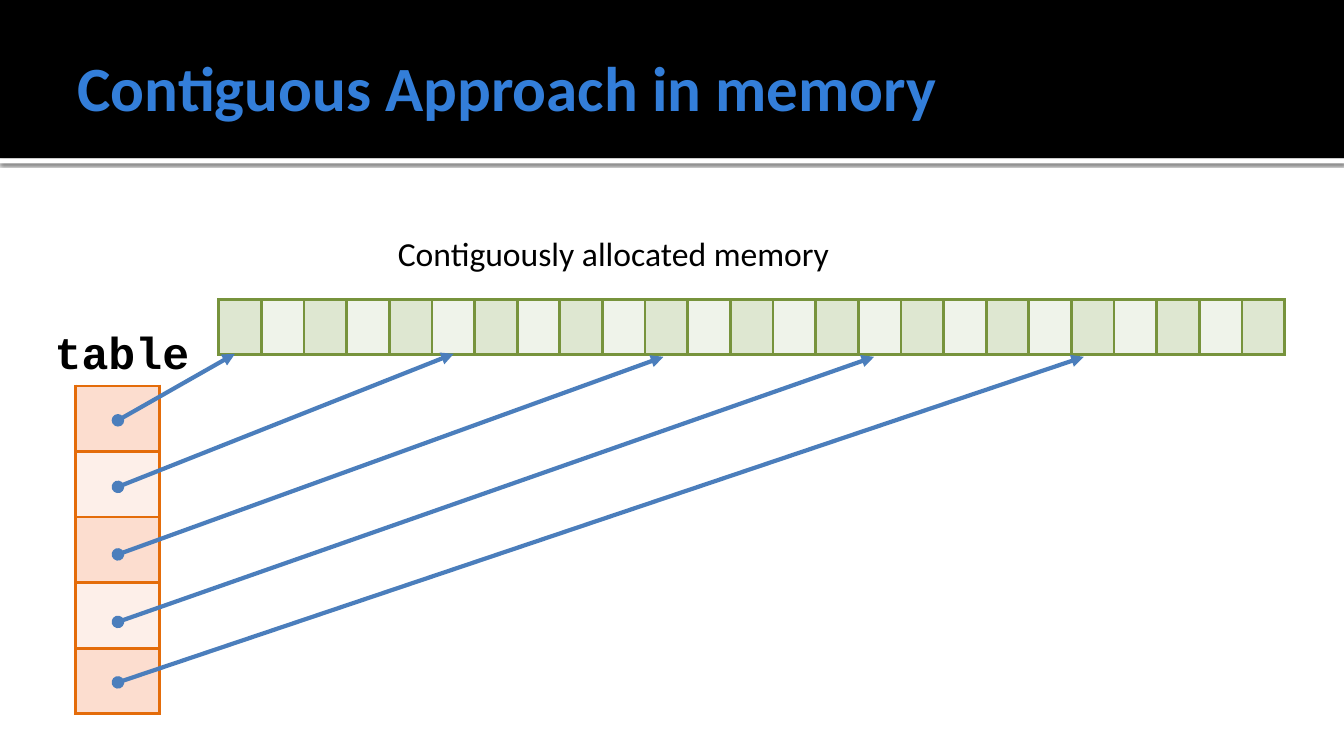
from pptx import Presentation
from pptx.dml.color import RGBColor
from pptx.enum.shapes import MSO_CONNECTOR, MSO_SHAPE
from pptx.enum.text import MSO_ANCHOR, PP_ALIGN
from pptx.oxml import parse_xml
from pptx.oxml.ns import nsdecls, qn
from pptx.util import Inches, Pt


def color(value):
    return RGBColor.from_string(value)


def element(tag, content="", **attributes):
    listed = " ".join(f'{name}="{value}"' for name, value in attributes.items())
    return parse_xml(f'<a:{tag} {nsdecls("a")} {listed}>{content}</a:{tag}>')


def write(frame, text, size, font="Calibri", fill="000000", bold=False,
          align=PP_ALIGN.LEFT, anchor=MSO_ANCHOR.TOP):
    frame.word_wrap = True
    frame.vertical_anchor = anchor
    para = frame.paragraphs[0]
    para.alignment = align
    span = para.add_run()
    span.text = text
    span.font.size = Pt(size)
    span.font.name = font
    span.font.bold = bold
    span.font.color.rgb = color(fill)


class MemorySlide:
    title_color = "337ED9"
    arrow_color = "4B7EBC"
    arrow_width = 3
    border_width = 2.25

    def __init__(self, deck):
        self.page = deck.slides.add_slide(deck.slide_layouts[5])
        self.shapes = self.page.shapes

    def bar(self, top, height, fill, shadow=False):
        box = self.shapes.add_shape(MSO_SHAPE.RECTANGLE, 0, Inches(top),
                                    Inches(13.33), Inches(height))
        box.fill.solid()
        box.fill.fore_color.rgb = color(fill)
        box.line.fill.background()
        box.shadow.inherit = False
        if shadow:
            effects = box.element.spPr.find(qn("a:effectLst"))
            effects.append(element(
                "outerShdw",
                '<a:srgbClr val="000000"><a:alpha val="60000"/></a:srgbClr>',
                blurRad=Pt(2.5), dist=Pt(0.8), dir=5400000, algn="t", rotWithShape=0))

    def title(self, text, left, top, width, height):
        box = self.shapes.title
        box.element.getparent().append(box.element)
        box.left, box.top = Inches(left), Inches(top)
        box.width, box.height = Inches(width), Inches(height)
        frame = box.text_frame
        frame.margin_left = Inches(0.1)
        frame.margin_right = frame.margin_top = frame.margin_bottom = Inches(0.05)
        write(frame, text, 45, fill=self.title_color, bold=True,
              anchor=MSO_ANCHOR.MIDDLE)

    def label(self, text, left, top, width, height, **style):
        box = self.shapes.add_textbox(Inches(left), Inches(top),
                                      Inches(width), Inches(height))
        write(box.text_frame, text, align=PP_ALIGN.CENTER, **style)

    def cells(self, rows, columns, left, top, width, height, fills, border):
        table = self.shapes.add_table(rows, columns, Inches(left), Inches(top),
                                      Inches(width), Inches(height)).table
        for column in table.columns:
            column.width = Inches(width / columns)
        for row in table.rows:
            row.height = Inches(height / rows)
        for index, cell in enumerate(table.iter_cells()):
            for side in ("lnL", "lnR", "lnT", "lnB"):
                cell._tc.get_or_add_tcPr().append(element(
                    side, f'<a:solidFill><a:srgbClr val="{border}"/></a:solidFill>',
                    w=Pt(self.border_width)))
            cell.fill.solid()
            cell.fill.fore_color.rgb = color(fills[index % 2])

    def arrow(self, start, end):
        connector = self.shapes.add_connector(
            MSO_CONNECTOR.STRAIGHT, *map(Inches, start + end))
        connector.line.color.rgb = color(self.arrow_color)
        connector.line.width = Pt(self.arrow_width)
        properties = connector.element.spPr
        line = properties.find(qn("a:ln"))
        line.append(element("headEnd", type="oval"))
        line.append(element("tailEnd", type="triangle"))
        properties.append(element("effectLst"))


def main():
    deck = Presentation()
    deck.slide_width = Inches(13.33)
    deck.slide_height = Inches(7.5)

    slide = MemorySlide(deck)
    slide.bar(1.57, 0.05, "FFFFFF", shadow=True)
    slide.bar(0, 1.57, "000000")
    slide.cells(1, 25, 2.17, 2.97, 10.58, 0.55, ("DEE7D1", "EFF3EA"), "77933C")
    slide.title("Contiguous Approach in memory", 0.67, 0.17, 12, 1.37)
    slide.cells(5, 1, 0.75, 3.83, 0.83, 3.25, ("FCDDCF", "FDEFE9"), "E46C0A")

    pointers = [(4.17, 2.33, 3.51), (4.83, 4.5, 3.51), (5.5, 6.58, 3.54),
                (6.17, 8.67, 3.54), (6.77, 10.75, 3.54)]
    for start_top, end_left, end_top in pointers:
        slide.arrow((1.17, start_top), (end_left, end_top))

    slide.label("table", 0.25, 3.17, 1.92, 0.64, size=32, font="Courier New", bold=True)
    slide.label("Contiguously allocated memory", 3.67, 2.26, 4.83, 0.5, size=24)
    deck.save("out.pptx")


if __name__ == "__main__":
    main()
